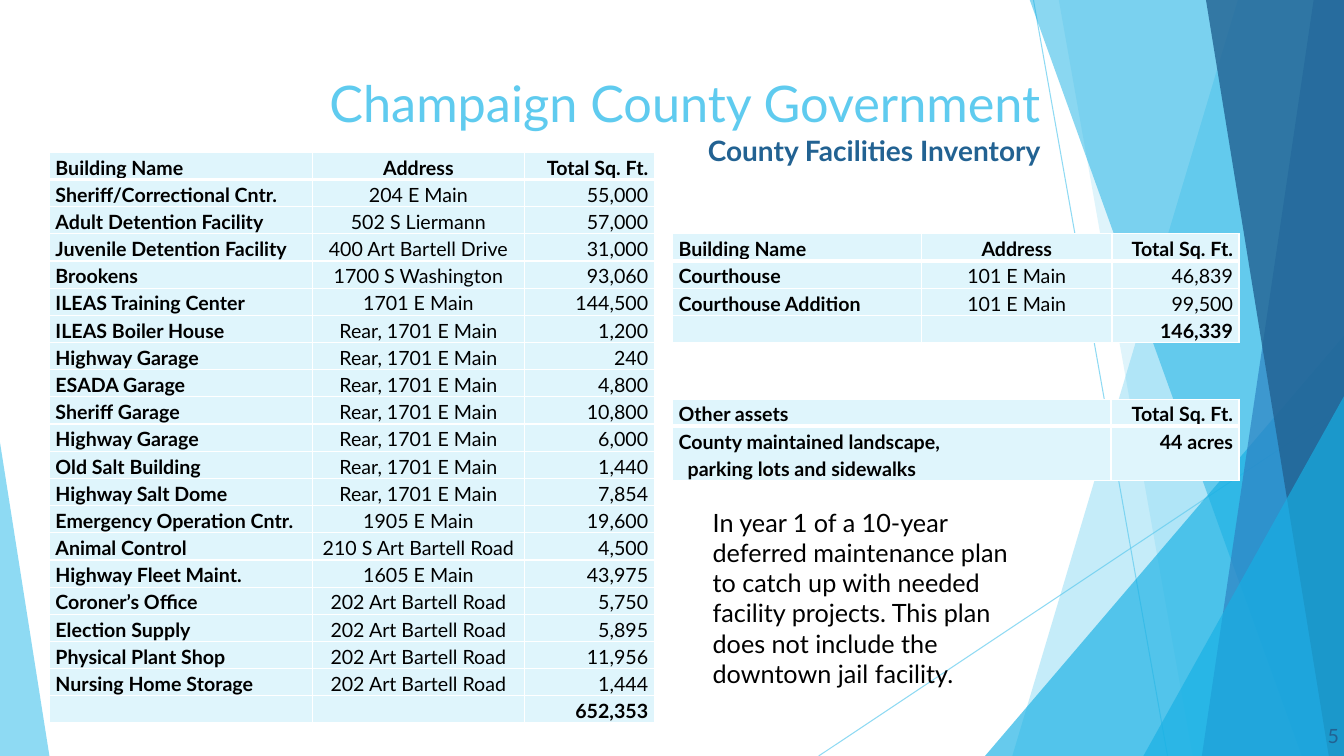
import pptx
import pptx.dml.color
import pptx.enum.shapes
import pptx.enum.text
import pptx.oxml
import pptx.oxml.ns
import pptx.util

Inches = pptx.util.Inches
Pt = pptx.util.Pt
ALIGN = pptx.enum.text.PP_ALIGN
NAMESPACE = pptx.oxml.ns.nsdecls("a")
FONT = "Lato"


def color(hex_code):
    return pptx.dml.color.RGBColor.from_string(hex_code)


def set_opacity(shape, percent):
    for color_element in shape._element.spPr.xpath(".//a:srgbClr"):
        color_element.append(pptx.oxml.parse_xml(f'<a:alpha {NAMESPACE} val="{percent * 1000}"/>'))


presentation = pptx.Presentation()
presentation.slide_width = Inches(13.33)
presentation.slide_height = Inches(7.5)
slide = presentation.slides.add_slide(presentation.slide_layouts[5])
shapes = slide.shapes

# Thin crossing lines
for start_x, start_y, end_x, end_y in [(10.25, 0, 11.58, 7.5), (13.33, 4.03, 8.12, 7.5)]:
    line = shapes.add_connector(
        pptx.enum.shapes.MSO_CONNECTOR.STRAIGHT,
        Inches(start_x), Inches(start_y), Inches(end_x), Inches(end_y))
    line.line.color.rgb = color("5FCBEF")
    line.line.width = Pt(0.75)
    line._element.spPr.append(pptx.oxml.parse_xml(f"<a:effectLst {NAMESPACE}/>"))
    set_opacity(line, 70)

# Facets: bands give top-left and bottom-left x, triangles give box and apex
facets = [
    ("band", (12.28, 10.04), "5FCBEF", 36),
    ("band", (10.5, 11.83), "5FCBEF", 20),
    ("triangle", (9.77, 3.33, 3.56, 4.17, 1), "17B0E4", 66),
    ("band", (10.21, 12.91), "17B0E4", 50),
    ("band", (13.03, 11.92), "2E83C3", 70),
    ("band", (11.96, 13.18), "226292", 80),
    ("triangle", (11.34, 3.93, 1.99, 3.57, 1), "17B0E4", 66),
    ("triangle", (0, 4.39, 0.49, 3.11, 0), "5FCBEF", 70),
]
for kind, geometry, fill_color, opacity in facets:
    if kind == "band":
        top_x, bottom_x = geometry
        builder = shapes.build_freeform(Inches(top_x), Inches(-0.01))
        corners = [(13.33, -0.01), (13.33, 7.5), (bottom_x, 7.5)]
        builder.add_line_segments([(Inches(x), Inches(y)) for x, y in corners], close=True)
        facet = builder.convert_to_shape()
    else:
        *box, apex = geometry
        facet = shapes.add_shape(
            pptx.enum.shapes.MSO_SHAPE.ISOSCELES_TRIANGLE, *[Inches(value) for value in box])
        facet.adjustments[0] = apex
    facet.shadow.inherit = False
    facet.fill.solid()
    facet.fill.fore_color.rgb = color(fill_color)
    facet.line.fill.background()
    set_opacity(facet, opacity)

# Title, brought in front of the facets
title = shapes.title
shapes._spTree.append(title._element)
title.left, title.top, title.width, title.height = [
    Inches(value) for value in (0.74, 0.67, 9.68, 1.44)]
title.text_frame.vertical_anchor = pptx.enum.text.MSO_ANCHOR.TOP
title.text_frame.auto_size = pptx.enum.text.MSO_AUTO_SIZE.NONE
paragraph = title.text_frame.paragraphs[0]
paragraph.alignment = ALIGN.RIGHT
heading = paragraph.add_run()
heading.text = "Champaign County Government"
paragraph.add_line_break()
subheading = paragraph.add_run()
subheading.text = "County Facilities Inventory"
for run, size, run_color, bold in [(heading, 36, "5FCBEF", False), (subheading, 20, "226292", True)]:
    run.font.name = FONT
    run.font.size = Pt(size)
    run.font.color.rgb = color(run_color)
    run.font.bold = bold

# Inventory tables
header = ("Building Name", "Address", "Total Sq. Ft.")
courthouse_rows = [
    header,
    ("Courthouse", "101 E Main", "46,839"),
    ("Courthouse Addition", "101 E Main", "99,500"),
    ("", "", "146,339"),
]
building_rows = [
    header,
    ("Sheriff/Correctional Cntr.", "204 E Main", "55,000"),
    ("Adult Detention Facility", "502 S Liermann", "57,000"),
    ("Juvenile Detention Facility", "400 Art Bartell Drive", "31,000"),
    ("Brookens", "1700 S Washington", "93,060"),
    ("ILEAS Training Center", "1701 E Main", "144,500"),
    ("ILEAS Boiler House", "Rear, 1701 E Main", "1,200"),
    ("Highway Garage", "Rear, 1701 E Main", "240"),
    ("ESADA Garage", "Rear, 1701 E Main", "4,800"),
    ("Sheriff Garage", "Rear, 1701 E Main", "10,800"),
    ("Highway Garage", "Rear, 1701 E Main", "6,000"),
    ("Old Salt Building", "Rear, 1701 E Main", "1,440"),
    ("Highway Salt Dome", "Rear, 1701 E Main", "7,854"),
    ("Emergency Operation Cntr.", "1905 E Main", "19,600"),
    ("Animal Control", "210 S Art Bartell Road", "4,500"),
    ("Highway Fleet Maint.", "1605 E Main", "43,975"),
    ("Coroner’s Office", "202 Art Bartell Road", "5,750"),
    ("Election Supply", "202 Art Bartell Road", "5,895"),
    ("Physical Plant Shop", "202 Art Bartell Road", "11,956"),
    ("Nursing Home Storage", "202 Art Bartell Road", "1,444"),
    ("", "", "652,353"),
]
other_rows = [
    ("Other assets", "Total Sq. Ft."),
    ("County maintained landscape,\nparking lots and sidewalks", "44 acres"),
]
tables = [
    (6.67, 2.32, (2.47, 1.89, 1.26), courthouse_rows),
    (0.49, 1.51, (2.61, 2.1, 1.29), building_rows),
    (6.67, 3.96, (4.35, 1.27), other_rows),
]
row_height = 0.27
for left, top, widths, rows in tables:
    table = shapes.add_table(
        len(rows), len(widths), Inches(left), Inches(top),
        Inches(sum(widths)), Inches(row_height * len(rows))).table
    table.first_row = table.horz_banding = False
    last_row, last_column = len(rows) - 1, len(widths) - 1
    for column, width in enumerate(widths):
        table.columns[column].width = Inches(width)
    for row, texts in enumerate(rows):
        line_count = max(text.count("\n") + 1 for text in texts)
        table.rows[row].height = Inches(row_height * line_count)
        for column, text in enumerate(texts):
            cell = table.cell(row, column)
            cell.margin_left = cell.margin_right = Inches(0.06)
            cell.margin_top = cell.margin_bottom = 0

            # White borders, thick under the header
            thickness = {"L": 1, "R": 1, "T": 3 if row == 1 else 1, "B": 3 if row == 0 else 1}
            for side, points in thickness.items():
                cell._tc.get_or_add_tcPr().append(pptx.oxml.parse_xml(
                    f'<a:ln{side} {NAMESPACE} w="{Pt(points)}"><a:solidFill>'
                    f'<a:srgbClr val="FFFFFF"/></a:solidFill></a:ln{side}>'))
            cell.fill.solid()
            cell.fill.fore_color.rgb = color("DFF5FC")

            # The figure above a total is underlined, like the header
            cell.text = text
            for index, paragraph in enumerate(cell.text_frame.paragraphs):
                paragraph.line_spacing = 1.15
                paragraph.font.name = FONT
                paragraph.font.size = Pt(14)
                paragraph.font.color.rgb = color("000000")
                paragraph.font.bold = column == 0 or row in (0, last_row)
                paragraph.font.underline = row == 0 or (row, column) == (last_row - 1, last_column)
                if column > 0:
                    paragraph.alignment = ALIGN.RIGHT if column == last_column else ALIGN.CENTER
                if index > 0:
                    paragraph._p.get_or_add_pPr().set("marL", str(Inches(0.09)))
                if not text:
                    paragraph._p.get_or_add_endParaRPr().set("sz", "1400")

# Plan note and page number
plan_note = (
    "In year 1 of a 10-year deferred maintenance plan to catch up with needed "
    "facility projects. This plan does not include the downtown jail facility.")
for text, box, size, text_color, alignment in [
    (plan_note, (6.97, 4.98, 3.23, 1.92), 18, "000000", ALIGN.LEFT),
    ("5", (12.68, 7.13, 0.7, 0.37), 14, "226292", ALIGN.RIGHT),
]:
    text_frame = shapes.add_textbox(*[Inches(value) for value in box]).text_frame
    text_frame.word_wrap = True
    text_frame.text = text
    paragraph = text_frame.paragraphs[0]
    paragraph.alignment = alignment
    paragraph.font.name = FONT
    paragraph.font.size = Pt(size)
    paragraph.font.color.rgb = color(text_color)

presentation.save("out.pptx")
